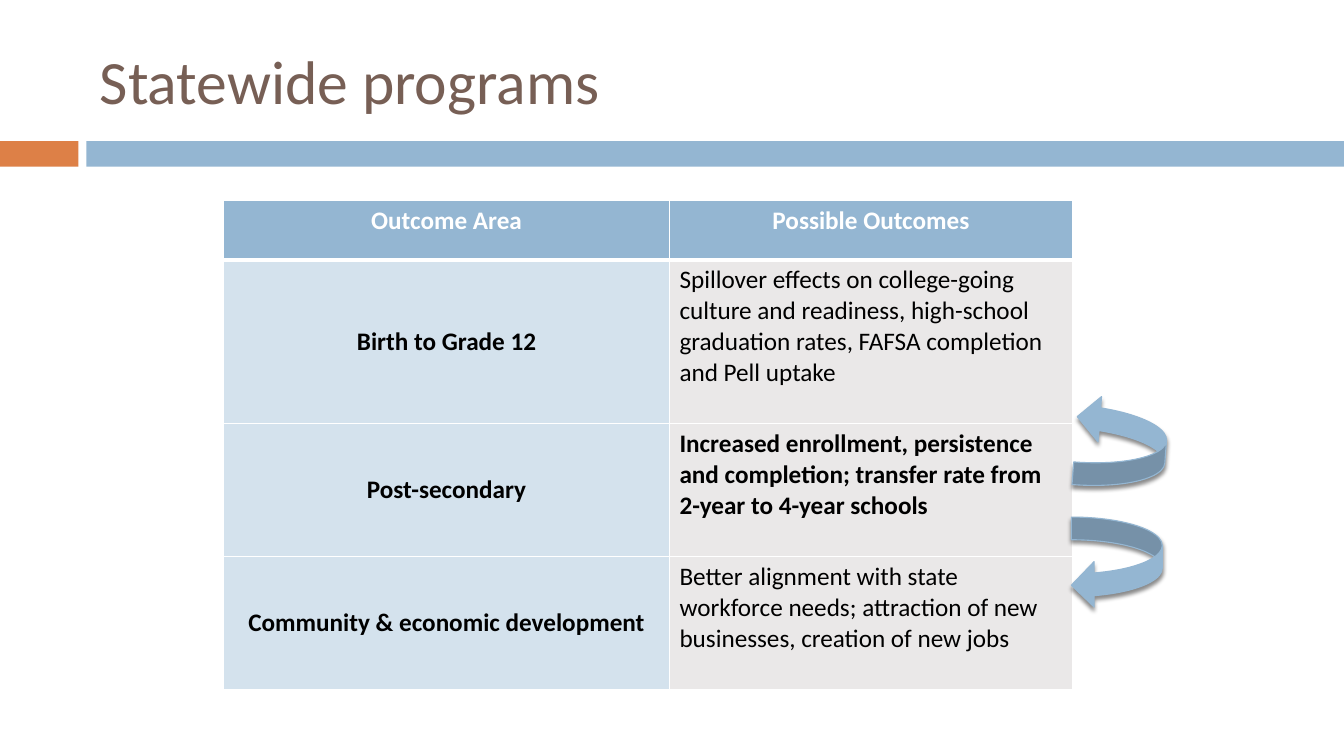
from lxml import etree
from pptx import Presentation
from pptx import util as u
from pptx.dml.color import RGBColor
from pptx.enum import shapes, text
from pptx.oxml import parse_xml
from pptx.oxml.ns import nsdecls

# Content
TITLE = "Statewide programs"
HEADER = ("Outcome Area", "Possible Outcomes")
PROGRAMS = [  # area, outcomes, outcomes in bold
    ("Birth to Grade 12", "Spillover effects on college-going culture and readiness, "
     "high-school graduation rates, FAFSA completion and Pell uptake", False),
    ("Post-secondary", "Increased enrollment, persistence and completion; "
     "transfer rate from 2-year to 4-year schools", True),
    ("Community & economic development", "Better alignment with state workforce needs; "
     "attraction of new businesses, creation of new jobs", False),
]

# Style and measures (cm)
FONT = "Calibri"
BLUE = RGBColor(0x94, 0xB6, 0xD2)
ORANGE = RGBColor(0xDD, 0x80, 0x47)
BROWN = RGBColor(0x77, 0x5F, 0x55)
PALE_BLUE = RGBColor(0xD4, 0xE2, 0xED)
PALE_GREY = RGBColor(0xEA, 0xE8, 0xE8)
WHITE = RGBColor(0xFF, 0xFF, 0xFF)
BLACK = RGBColor(0, 0, 0)
SLIDE_W, SLIDE_H = 33.87, 19.05
BAR_TOP, BAR_H = 3.56, 0.64
BARS = [(0, 1.98, ORANGE), (2.18, SLIDE_W - 2.18, BLUE)]
TABLE_LEFT, TABLE_TOP = 5.64, 5.06
COL_WIDTHS = (11.23, 10.16)
ROW_HEIGHTS = (1.49, 4.13, 3.35, 3.35)
ARROW_SIZE = 2.29
ARROWS = [  # kind, left, top, rotation
    (shapes.MSO_SHAPE.CURVED_UP_ARROW, 27.1, 10.01, 274.4),
    (shapes.MSO_SHAPE.CURVED_DOWN_ARROW, 27, 13.03, 90),
]


def add_filled(s, kind, left, top, width, height, color):
    sp = s.shapes.add_shape(kind, u.Cm(left), u.Cm(top), u.Cm(width), u.Cm(height))
    sp.shadow.inherit = False
    sp.fill.solid()
    sp.fill.fore_color.rgb = color
    sp.line.fill.background()
    return sp


def add_shadow(sp):
    effects = sp._element.spPr.find("{*}effectLst")
    effects.append(parse_xml(
        f'<a:outerShdw {nsdecls("a")} blurRad="38100" dist="30000" dir="5400000" '
        'rotWithShape="0"><a:srgbClr val="000000"><a:alpha val="45000"/>'
        '</a:srgbClr></a:outerShdw>'))


def set_borders(cell, top, bottom):
    tc_pr = cell._tc.get_or_add_tcPr()
    for i, (side, points) in enumerate(zip("LRTB", (1, 1, top, bottom))):
        tc_pr.insert(i, parse_xml(
            f'<a:ln{side} {nsdecls("a")} w="{u.Pt(points)}"><a:solidFill>'
            f'<a:srgbClr val="{WHITE}"/></a:solidFill></a:ln{side}>'))


def fill_cell(cell, words, fill, color, bold, centered, middle):
    cell.fill.solid()
    cell.fill.fore_color.rgb = fill
    anchor = text.MSO_ANCHOR
    cell.vertical_anchor = anchor.MIDDLE if middle else anchor.TOP
    p = cell.text_frame.paragraphs[0]
    p.text = words
    p.alignment = text.PP_ALIGN.CENTER if centered else text.PP_ALIGN.LEFT
    p.font.name, p.font.size, p.font.bold = FONT, u.Pt(18), bold
    p.font.color.rgb = color


def main():
    prs = Presentation()
    prs.slide_width, prs.slide_height = u.Cm(SLIDE_W), u.Cm(SLIDE_H)
    s = prs.slides.add_slide(prs.slide_layouts[5])

    # Bars under the title
    for left, width, color in BARS:
        add_filled(s, shapes.MSO_SHAPE.RECTANGLE, left, BAR_TOP, width, BAR_H, color)

    # Title
    title = s.shapes.title
    title.left, title.top = u.Cm(2.26), u.Cm(0.64)
    title.width, title.height = u.Cm(30.2), u.Cm(2.74)
    title.text_frame.vertical_anchor = text.MSO_ANCHOR.MIDDLE
    p = title.text_frame.paragraphs[0]
    p.text = TITLE
    p.alignment = text.PP_ALIGN.LEFT
    p.font.name, p.font.size = FONT, u.Pt(44)
    p.font.color.rgb = BROWN

    # Table of outcomes
    table = s.shapes.add_table(
        len(ROW_HEIGHTS), len(COL_WIDTHS), u.Cm(TABLE_LEFT), u.Cm(TABLE_TOP),
        u.Cm(sum(COL_WIDTHS)), u.Cm(sum(ROW_HEIGHTS))).table
    for column, width in zip(table.columns, COL_WIDTHS):
        column.width = u.Cm(width)
    for row, height in zip(table.rows, ROW_HEIGHTS):
        row.height = u.Cm(height)
    for c, words in enumerate(HEADER):
        fill_cell(table.cell(0, c), words, BLUE, WHITE, True, True, False)
    for r, (area, outcomes, bold) in enumerate(PROGRAMS, 1):
        fill_cell(table.cell(r, 0), area, PALE_BLUE, BLACK, True, True, True)
        fill_cell(table.cell(r, 1), outcomes, PALE_GREY, BLACK, bold, False, False)
    for r, row in enumerate(table.rows):
        for cell in row.cells:
            set_borders(cell, top=3 if r == 1 else 1, bottom=3 if r == 0 else 1)

    # Curved arrows from the post-secondary row to its neighbours
    for kind, left, top, rotation in ARROWS:
        arrow = add_filled(s, kind, left, top, ARROW_SIZE, ARROW_SIZE, BLUE)
        arrow.rotation = rotation
        arrow.line.color.rgb = BLUE
        arrow.line.width = u.Pt(0.79)
        add_shadow(arrow)

    prs.save("out.pptx")


if __name__ == "__main__":
    main()
